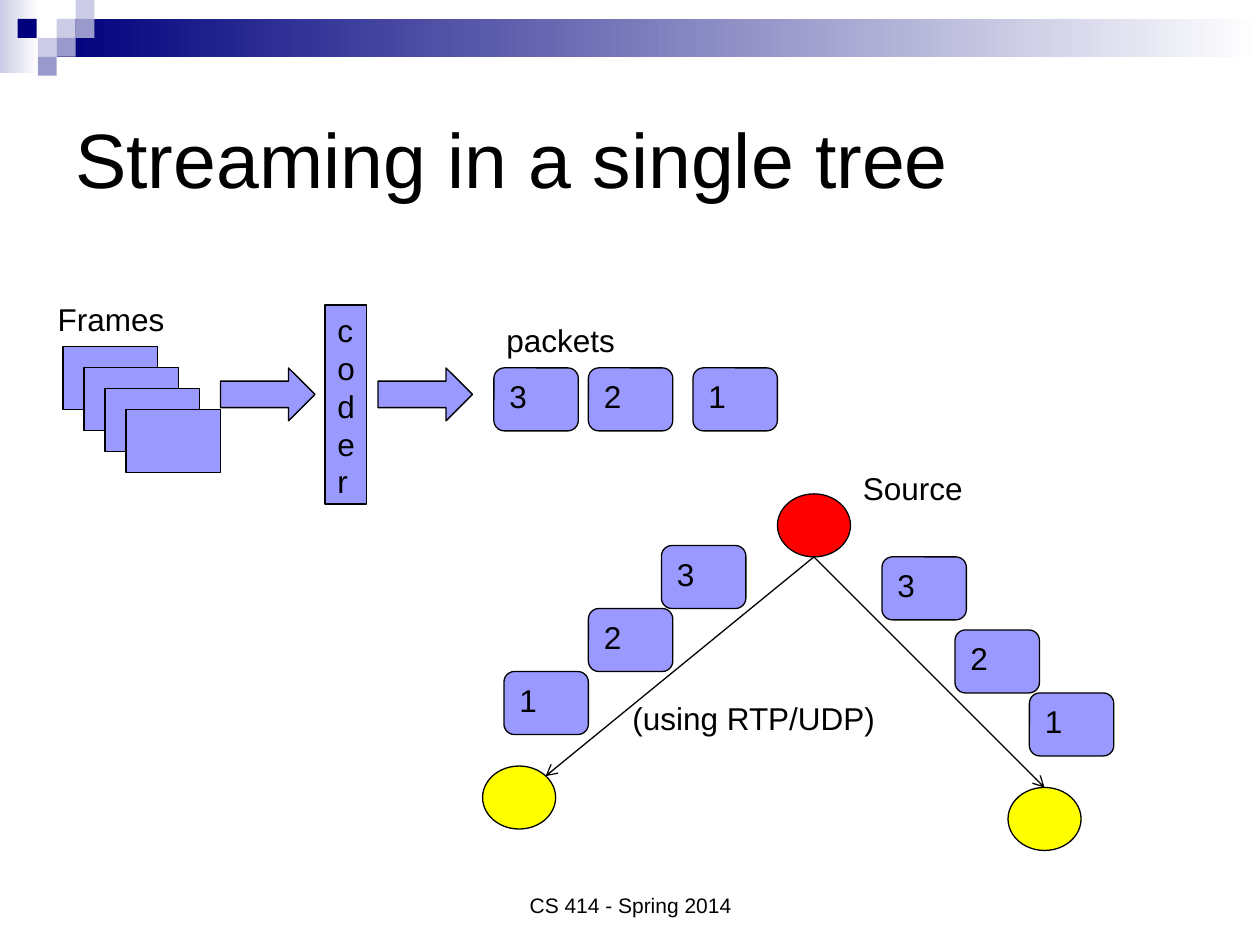
import dataclasses

import lxml.etree
import pptx
import pptx.dml.color
import pptx.enum.shapes
import pptx.enum.text
import pptx.oxml.ns
import pptx.util

Inches = pptx.util.Inches
Kind = pptx.enum.shapes.MSO_SHAPE
Anchor = pptx.enum.text.MSO_ANCHOR
Align = pptx.enum.text.PP_ALIGN


@dataclasses.dataclass(frozen=True)
class Theme:
    font: str = "Arial"
    title_size: int = 44
    body_size: int = 18
    footer_size: int = 12
    line_width: float = 0.75
    ink: str = "000000"
    white: str = "FFFFFF"
    navy: str = "00007D"
    pale: str = "CCCCE6"
    medium: str = "9999CC"
    block: str = "9999FF"
    source: str = "FF0000"
    peer: str = "FFFF00"


def rgb(value):
    return pptx.dml.color.RGBColor.from_string(value)


class SlideBuilder:
    def __init__(self, page, theme):
        self.page = page
        self.theme = theme

    def set_text(self, shape, text, size, align=Align.LEFT, anchor=Anchor.TOP, wrap=True):
        frame = shape.text_frame
        frame.word_wrap = wrap
        frame.vertical_anchor = anchor
        para = frame.paragraphs[0]
        para.text = text
        para.alignment = align
        para.font.name = self.theme.font
        para.font.size = pptx.util.Pt(size)
        para.font.color.rgb = rgb(self.theme.ink)

    def text(self, text, left, top, width, height, size, **style):
        box = self.page.shapes.add_textbox(
            Inches(left), Inches(top), Inches(width), Inches(height))
        self.set_text(box, text, size, **style)

    def label(self, text, left, top, width):
        self.text(text, left, top, width, 0.4, self.theme.body_size, wrap=False)

    def plain(self, kind, left, top, width, height):
        shape = self.page.shapes.add_shape(
            kind, Inches(left), Inches(top), Inches(width), Inches(height))
        shape.shadow.inherit = False
        shape.line.fill.background()
        return shape

    def tile(self, left, top, color, size=0.15):
        shape = self.plain(Kind.RECTANGLE, left, top, size, size)
        shape.fill.solid()
        shape.fill.fore_color.rgb = rgb(color)

    def fade(self, left, top, width, height, color):
        shape = self.plain(Kind.RECTANGLE, left, top, width, height)
        shape.fill.gradient()
        shape.fill.gradient_angle = 0
        for stop, shade in zip(shape.fill.gradient_stops, (color, self.theme.white)):
            stop.color.rgb = rgb(shade)

    def outlined(self, kind, left, top, width, height, color=None, text=None):
        shape = self.plain(kind, left, top, width, height)
        shape.fill.solid()
        shape.fill.fore_color.rgb = rgb(color or self.theme.block)
        shape.line.color.rgb = rgb(self.theme.ink)
        shape.line.width = pptx.util.Pt(self.theme.line_width)
        if text:
            self.set_text(shape, text, self.theme.body_size)

    def packet(self, number, left, top):
        self.outlined(Kind.ROUNDED_RECTANGLE, left, top, 0.67, 0.5, text=str(number))

    def node(self, left, top, color):
        self.outlined(Kind.OVAL, left, top, 0.58, 0.5, color)

    def arrow(self, start, end):
        connector = self.page.shapes.add_connector(
            pptx.enum.shapes.MSO_CONNECTOR.STRAIGHT, *map(Inches, start + end))
        connector.line.color.rgb = rgb(self.theme.ink)
        connector.line.width = pptx.util.Pt(self.theme.line_width)
        qn = pptx.oxml.ns.qn
        properties = connector._element.spPr
        lxml.etree.SubElement(properties.find(qn("a:ln")), qn("a:tailEnd"), type="arrow")
        lxml.etree.SubElement(properties, qn("a:effectLst"))


def main():
    deck = pptx.Presentation()
    deck.slide_width, deck.slide_height = Inches(10), Inches(7.5)
    theme = Theme()
    slide = SlideBuilder(deck.slides.add_slide(deck.slide_layouts[6]), theme)

    # Banner with its mosaic of tiles
    slide.fade(0, 0, 0.31, 0.58, theme.pale)
    slide.fade(0.45, 0.15, 9.55, 0.3, theme.navy)
    for left, top, color in (
        (0.45, 0.15, theme.pale), (0.6, 0, theme.pale), (0.6, 0.15, theme.medium),
        (0.3, 0.3, theme.pale), (0.14, 0.15, theme.navy),
        (0.45, 0.3, theme.medium), (0.3, 0.45, theme.medium),
    ):
        slide.tile(left, top, color)

    # Title and footer
    slide.text("Streaming in a single tree", 0.5, 0.5, 9, 1.5, theme.title_size,
               anchor=Anchor.MIDDLE)
    slide.text("CS 414 - Spring 2014", 3.42, 6.83, 3.17, 0.5, theme.footer_size,
               align=Align.CENTER, anchor=Anchor.BOTTOM)

    # Frames pass through the coder and become packets
    slide.label("Frames", 0.36, 2.33, 1.06)
    for index in range(4):
        slide.outlined(Kind.RECTANGLE, 0.5 + index / 6, 2.75 + index / 6, 0.75, 0.5)
    for left in (1.75, 3):
        slide.outlined(Kind.RIGHT_ARROW, left, 2.92, 0.75, 0.42)
    slide.outlined(Kind.RECTANGLE, 2.58, 2.42, 0.33, 1.58, text="coder")
    slide.label("packets", 3.92, 2.5, 1.07)

    # Source, peers and the two branches of the tree
    slide.node(6.17, 3.92, theme.source)
    slide.node(3.83, 6.08, theme.peer)
    slide.node(8, 6.25, theme.peer)
    for end in ((4.33, 6.16), (8.29, 6.25)):
        slide.arrow((6.46, 4.42), end)
    slide.label("Source", 6.75, 3.67, 1)

    # Packets 3, 2, 1: the coder's output, then each branch
    packet_rows = (
        ((3.92, 2.92), (4.67, 2.92), (5.5, 2.92)),
        ((5.25, 4.33), (4.67, 4.83), (4, 5.33)),
        ((7, 4.42), (7.58, 5), (8.17, 5.5)),
    )
    for row in packet_rows:
        for number, (left, top) in zip((3, 2, 1), row):
            slide.packet(number, left, top)
    slide.label("(using RTP/UDP)", 4.92, 5.5, 2.15)

    deck.save("out.pptx")


if __name__ == "__main__":
    main()
